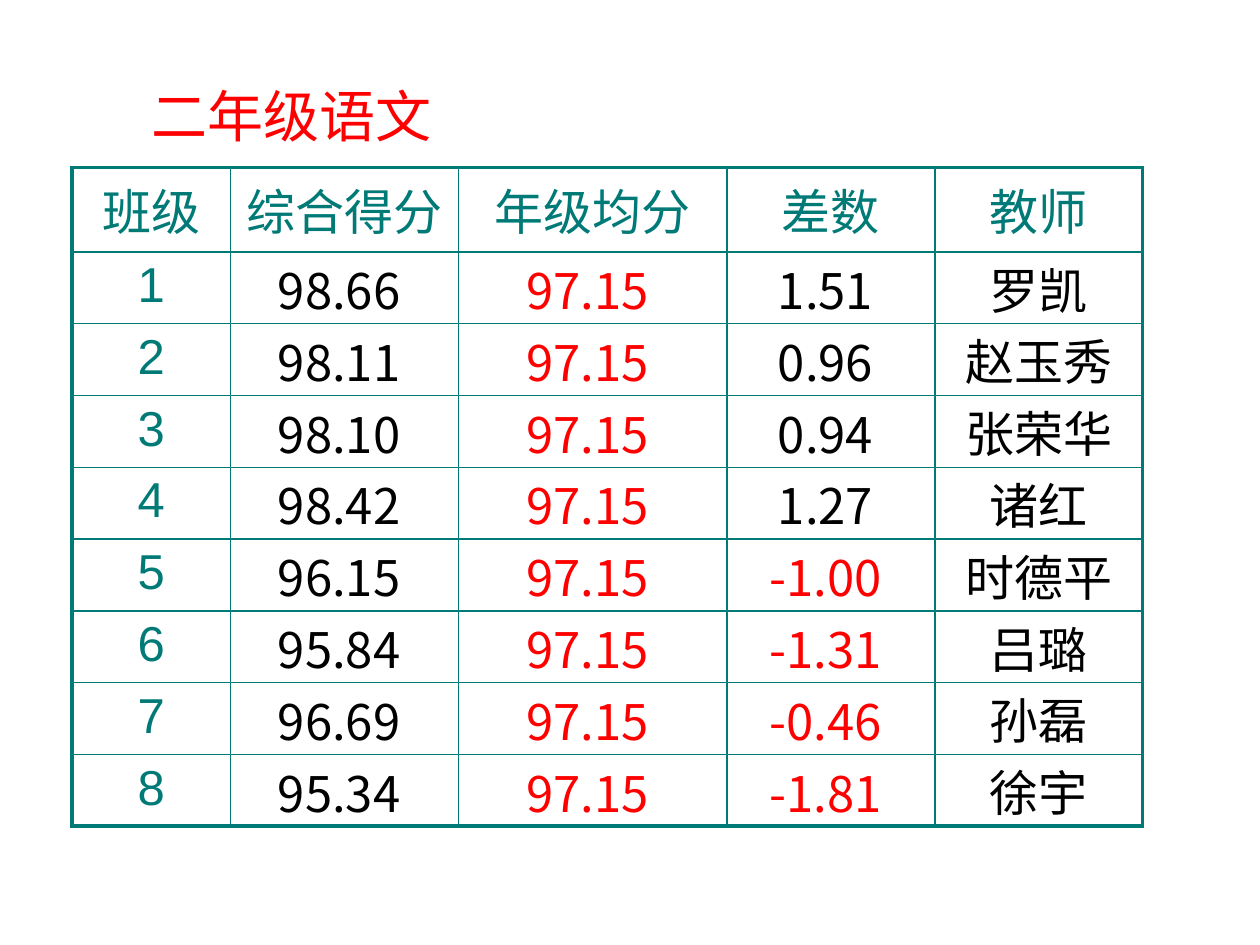
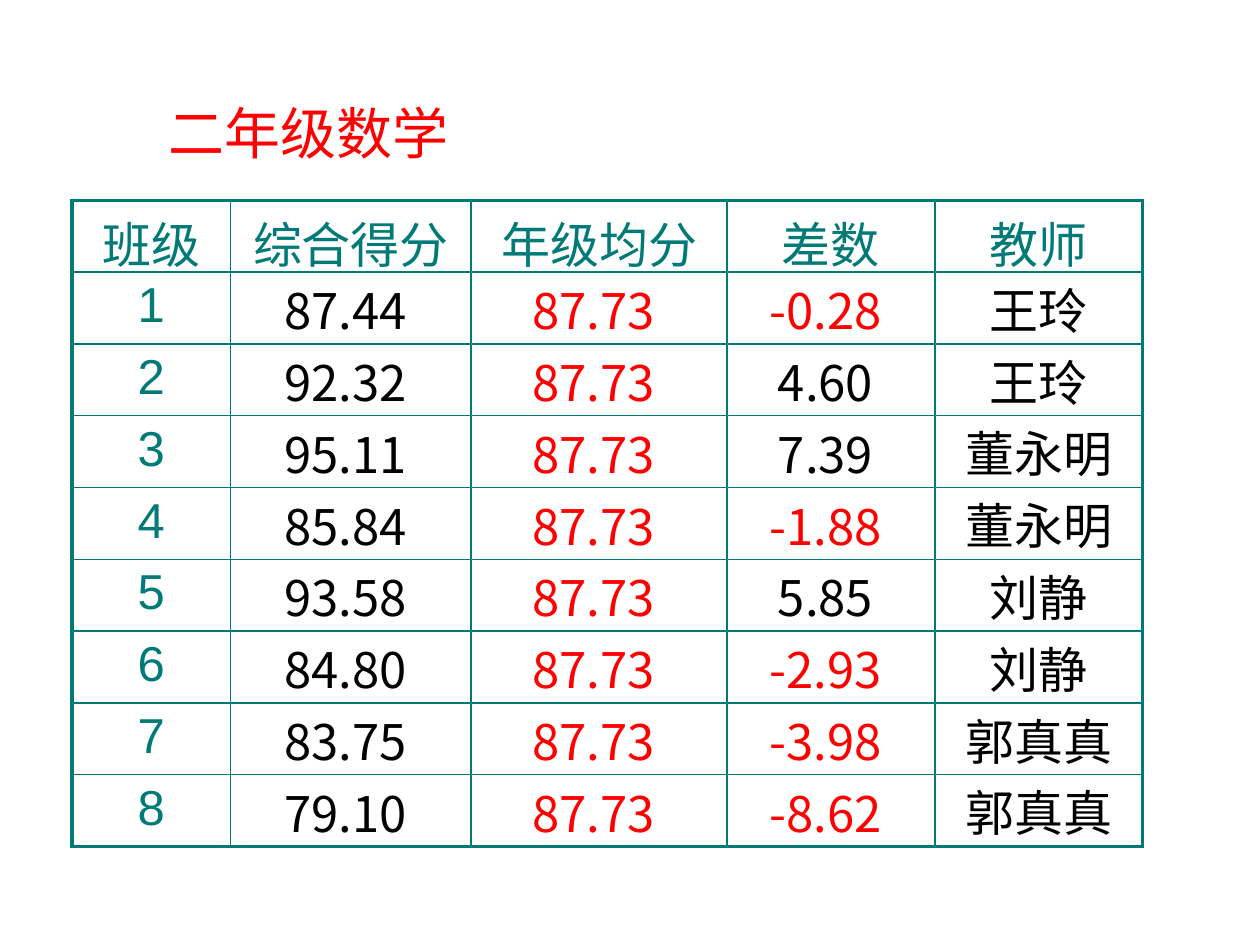
from lxml.etree import SubElement
from pptx import Presentation
from pptx.dml.color import RGBColor as RGB
from pptx.enum.text import MSO_ANCHOR as ANCHOR, PP_ALIGN as ALIGN
from pptx.oxml.ns import qn
from pptx.util import Inches, Pt

HEADERS = ["班级", "综合得分", "年级均分", "差数", "教师"]
SLIDES = [
    dict(
        title="二年级语文", title_at=(0.57, 0.6, 3.49, 0.63),
        top=1.33, height=5.2, header_height=0.67,
        widths=[1.26, 1.81, 2.13, 1.65, 1.65], average=97.15,
        rows=[(98.66, 1.51, "罗凯"), (98.11, 0.96, "赵玉秀"),
              (98.10, 0.94, "张荣华"), (98.42, 1.27, "诸红"),
              (96.15, -1.00, "时德平"), (95.84, -1.31, "吕璐"),
              (96.69, -0.46, "孙磊"), (95.34, -1.81, "徐宇")],
    ),
    dict(
        title="二年级数学", title_at=(0.53, 0.73, 3.84, 0.63),
        top=1.59, height=6.23, header_height=0.57,
        widths=[1.26, 1.91, 2.03, 1.65, 1.65], average=87.73,
        rows=[(87.44, -0.28, "王玲"), (92.32, 4.60, "王玲"),
              (95.11, 7.39, "董永明"), (85.84, -1.88, "董永明"),
              (93.58, 5.85, "刘静"), (84.80, -2.93, "刘静"),
              (83.75, -3.98, "郭真真"), (79.10, -8.62, "郭真真")],
    ),
]
THEME = dict(
    teal="007A77", red="FF0000", black="000000",
    latin="Arial", cjk="Noto Sans CJK SC",
    title_size=32, cell_size=28, outer=2.25, inner=1,
)
TABLE_LEFT, ROW_HEIGHT = 0.57, 0.57


def write(tf, text, size, font, color):
    p = tf.paragraphs[0]
    p.alignment = ALIGN.CENTER
    r = p.add_run()
    r.text = text
    for name, value in dict(size=Pt(size), name=font).items():
        setattr(r.font, name, value)
    r.font.color.rgb = RGB.from_string(color)
    SubElement(r.font._element, qn("a:ea"), typeface=THEME["cjk"])


def add_borders(cell, outer_sides):
    tc_pr = cell._tc.get_or_add_tcPr()
    for side in "LRTB":
        width = THEME["outer" if side in outer_sides else "inner"]
        ln = SubElement(tc_pr, qn(f"a:ln{side}"), w=str(Pt(width)))
        fill = SubElement(ln, qn("a:solidFill"))
        SubElement(fill, qn("a:srgbClr"), val=THEME["teal"])
    cell.fill.background()


def style_for(row, col, text):
    if row == 0 or col == 0:
        return THEME["latin"], THEME["teal"], {}
    red = col == 2 or (col == 3 and text.startswith("-"))
    layout = dict.fromkeys(
        ("margin_left", "margin_right", "margin_top", "margin_bottom"), 0)
    layout["vertical_anchor"] = ANCHOR.MIDDLE if col == 4 else ANCHOR.BOTTOM
    return THEME["cjk"], THEME["red" if red else "black"], layout


def add_scores(s, data):
    grid = [HEADERS] + [
        [str(n), f"{score:.2f} ", f"{data['average']:.2f} ", f"{gap:.2f} ", teacher]
        for n, (score, gap, teacher) in enumerate(data["rows"], 1)
    ]
    last_row, last_col = len(grid) - 1, len(HEADERS) - 1
    frame = s.shapes.add_table(
        len(grid), len(HEADERS), Inches(TABLE_LEFT), Inches(data["top"]),
        Inches(sum(data["widths"])), Inches(data["height"]))
    table = frame.table
    table.first_row = table.horz_banding = False
    for column, width in zip(table.columns, data["widths"]):
        column.width = Inches(width)
    for i, row in enumerate(table.rows):
        row.height = Inches(ROW_HEIGHT if i else data["header_height"])
    frame.height = Inches(data["height"])
    for i, texts in enumerate(grid):
        for j, text in enumerate(texts):
            cell = table.cell(i, j)
            font, color, layout = style_for(i, j, text)
            for name, value in layout.items():
                setattr(cell, name, value)
            edges = dict(L=j == 0, R=j == last_col, T=i == 0, B=i == last_row)
            add_borders(cell, [side for side, outer in edges.items() if outer])
            write(cell.text_frame, text, THEME["cell_size"], font, color)


def add_title(s, data):
    tf = s.shapes.add_textbox(*map(Inches, data["title_at"])).text_frame
    tf.word_wrap = True
    write(tf, data["title"], THEME["title_size"], THEME["latin"], THEME["red"])


def main():
    prs = Presentation()
    prs.slide_width, prs.slide_height = Inches(10), Inches(7.5)
    for data in SLIDES:
        s = prs.slides.add_slide(prs.slide_layouts[6])
        add_scores(s, data)
        add_title(s, data)
    prs.save("out.pptx")


if __name__ == "__main__":
    main()
